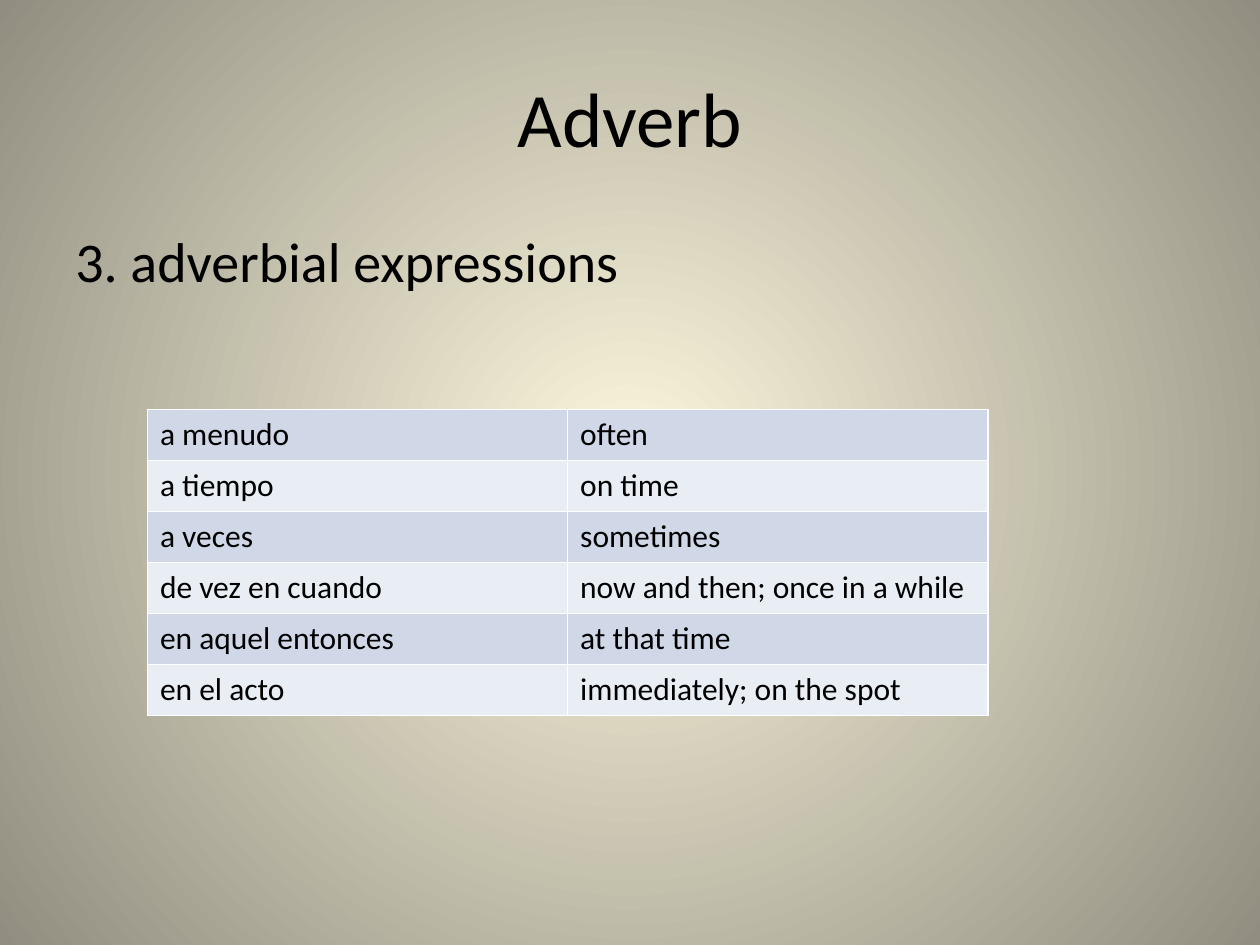
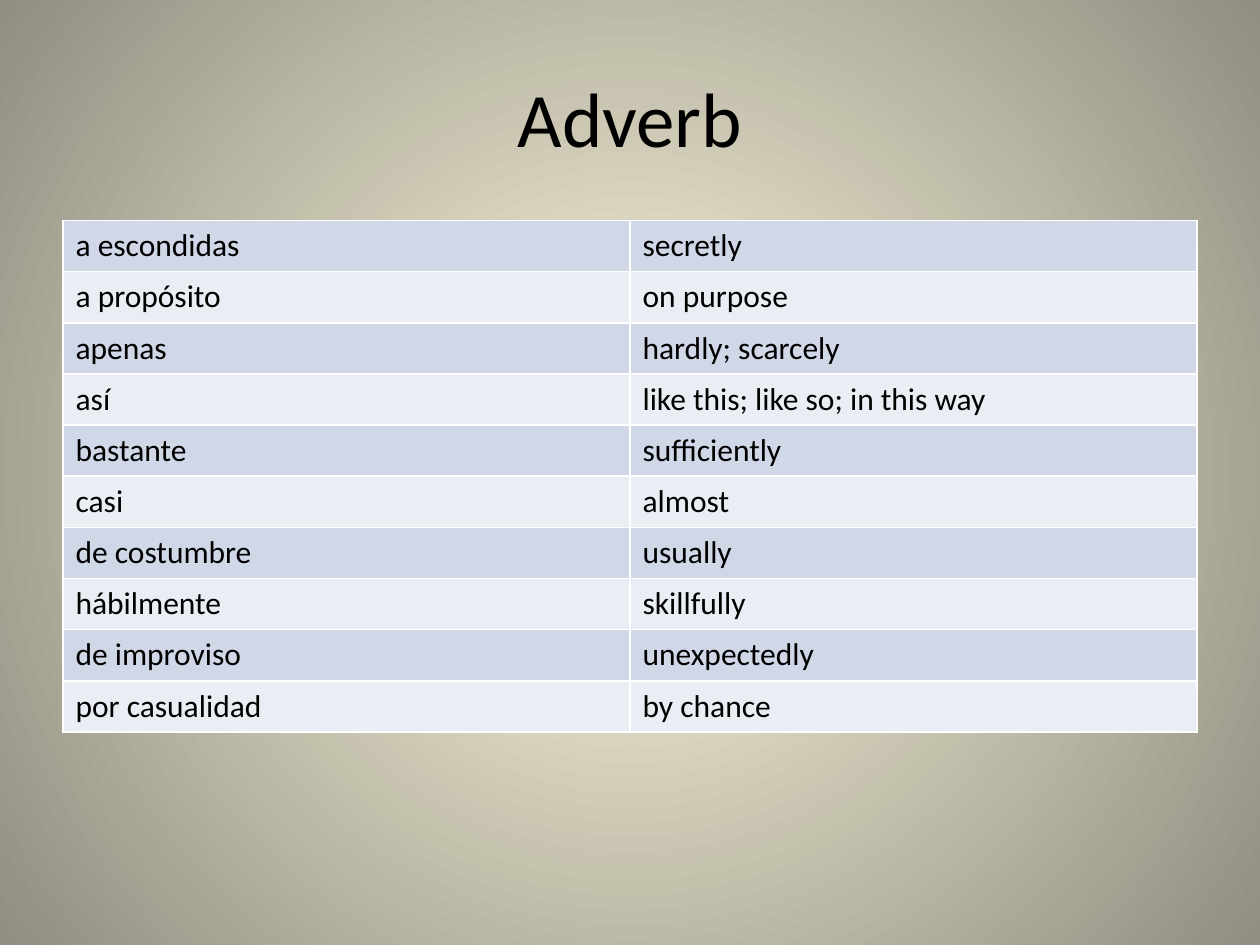
from dataclasses import dataclass

from lxml import etree
from pptx import Presentation
from pptx.dml.color import RGBColor
from pptx.enum.text import MSO_ANCHOR, PP_ALIGN
from pptx.oxml import parse_xml
from pptx.oxml.ns import nsdecls, qn
from pptx.util import Inches, Pt

CENTER, LEFT = PP_ALIGN.CENTER, PP_ALIGN.LEFT
MIDDLE, TOP = MSO_ANCHOR.MIDDLE, MSO_ANCHOR.TOP


@dataclass(frozen=True)
class Theme:
    font: str = "Calibri"
    ink: str = "000000"
    glow: str = "FCF7DD"
    edge: str = "918E81"
    bands: tuple = ("D0D8E8", "E9EDF4")
    rule: str = "FFFFFF"
    title: int = 44
    body: int = 32
    cell: int = 18


THEME = Theme()

LESSONS = [
    {
        "body": "3. adverbial expressions",
        "box": (1.17, 3.25, 6.67, 2.43),
        "rows": [
            ("a menudo", "often"),
            ("a tiempo", "on time"),
            ("a veces", "sometimes"),
            ("de vez en cuando", "now and then; once in a while"),
            ("en aquel entonces", "at that time"),
            ("en el acto", "immediately; on the spot"),
        ],
    },
    {
        "body": None,
        "box": (0.5, 1.75, 9, 4.06),
        "rows": [
            ("a escondidas", "secretly"),
            ("a propósito", "on purpose"),
            ("apenas", "hardly; scarcely"),
            ("así", "like this; like so; in this way"),
            ("bastante", "sufficiently"),
            ("casi", "almost"),
            ("de costumbre", "usually"),
            ("hábilmente", "skillfully"),
            ("de improviso", "unexpectedly"),
            ("por casualidad", "by chance"),
        ],
    },
]


def write(frame, text, size, align=LEFT):
    frame.text = text
    para = frame.paragraphs[0]
    para.alignment = align
    font = para.runs[0].font
    font.name = THEME.font
    font.size = Pt(size)
    font.color.rgb = RGBColor.from_string(THEME.ink)


def add_text(slide, box, text, size, align=LEFT, anchor=TOP):
    frame = slide.shapes.add_textbox(*map(Inches, box)).text_frame
    frame.word_wrap = True
    frame.vertical_anchor = anchor
    write(frame, text, size, align)


deck = Presentation()
deck.slide_width, deck.slide_height = Inches(10), Inches(7.5)

# The radial glow sits on the master, so every slide shares it
master = deck.slide_master
master.background.fill.solid()
solid = next(master.element.iter(qn("p:bgPr")))[0]
solid.getparent().replace(solid, parse_xml(
    f'<a:gradFill {nsdecls("a")} rotWithShape="1"><a:gsLst>'
    f'<a:gs pos="0"><a:srgbClr val="{THEME.glow}"/></a:gs>'
    f'<a:gs pos="100000"><a:srgbClr val="{THEME.edge}"/></a:gs></a:gsLst>'
    '<a:path path="circle"><a:fillToRect l="50000" t="50000" r="50000" b="50000"/>'
    '</a:path></a:gradFill>'))

for lesson in LESSONS:
    slide = deck.slides.add_slide(deck.slide_layouts[6])
    add_text(slide, (0.5, 0.3, 9, 1.25), "Adverb", THEME.title, CENTER, MIDDLE)
    if lesson["body"]:
        add_text(slide, (0.5, 1.75, 9, 4.95), lesson["body"], THEME.body)

    rows = lesson["rows"]
    table = slide.shapes.add_table(len(rows), 2, *map(Inches, lesson["box"])).table
    table.first_row = table.horz_banding = False
    for r, pair in enumerate(rows):
        for c, text in enumerate(pair):
            cell = table.cell(r, c)
            write(cell.text_frame, text, THEME.cell)
            cell.fill.solid()
            cell.fill.fore_color.rgb = RGBColor.from_string(THEME.bands[r % 2])
            # Borders must come before the fill in the cell properties
            props = cell._tc.get_or_add_tcPr()
            for i, side in enumerate(("lnL", "lnR", "lnT", "lnB")):
                line = etree.Element(qn(f"a:{side}"), w=str(Pt(1)))
                paint = etree.SubElement(line, qn("a:solidFill"))
                etree.SubElement(paint, qn("a:srgbClr"), val=THEME.rule)
                props.insert(i, line)

deck.save("out.pptx")
